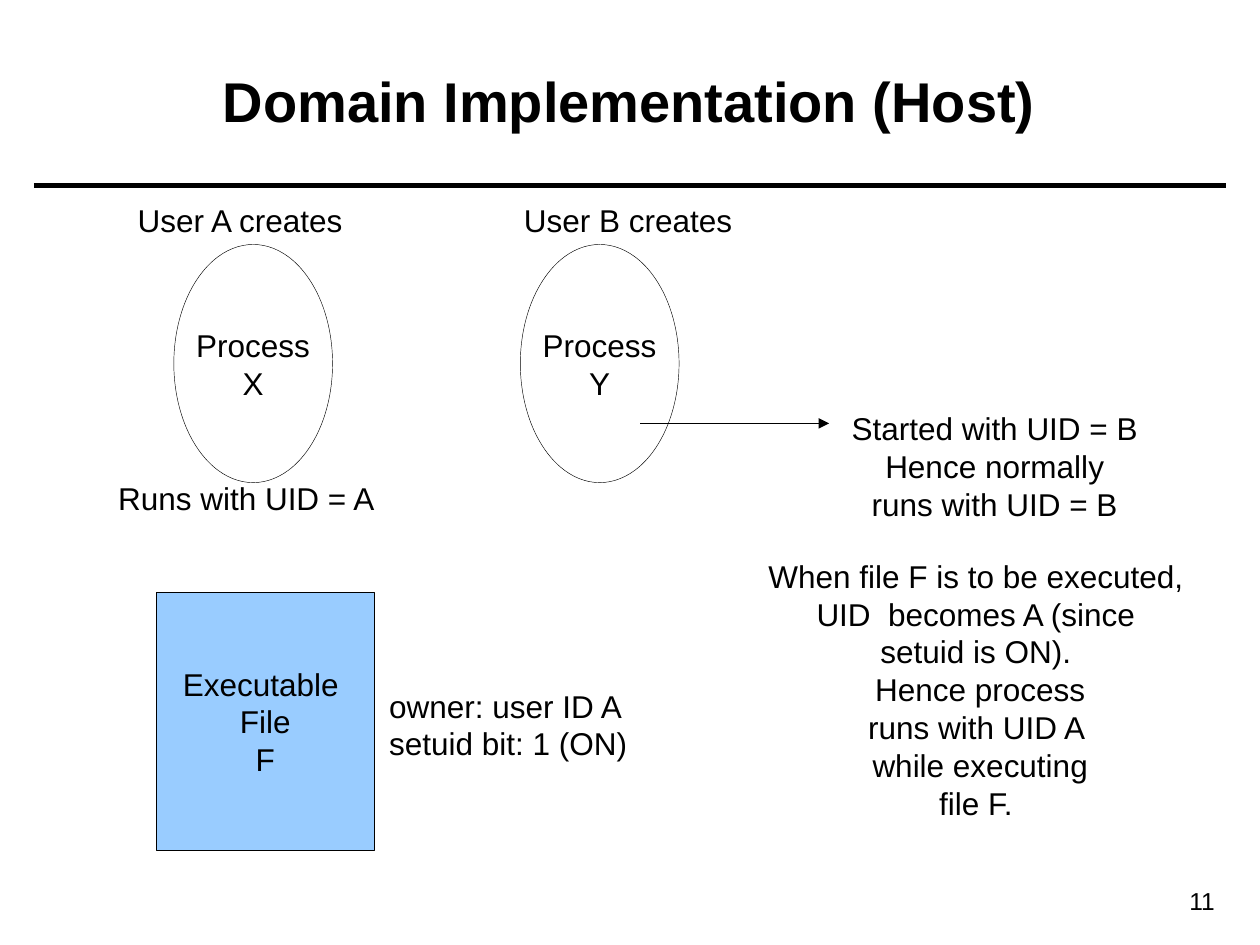
from dataclasses import dataclass

from lxml.etree import SubElement
from pptx import Presentation
from pptx.dml.color import RGBColor
from pptx.enum.shapes import MSO_CONNECTOR, MSO_SHAPE
from pptx.enum.text import MSO_ANCHOR, PP_ALIGN
from pptx.oxml.ns import qn
from pptx.util import Inches, Pt


@dataclass(frozen=True)
class Theme:
    font: str = "Arial"
    ink: RGBColor = RGBColor(0x00, 0x00, 0x00)
    file_fill: RGBColor = RGBColor(0x99, 0xCC, 0xFF)
    title_size: int = 32
    body_size: int = 18
    number_size: int = 14
    rule_width: float = 3
    outline_width: float = 0.25


THEME = Theme()


def write(frame, paragraphs, size=THEME.body_size, align=PP_ALIGN.CENTER,
          anchor=MSO_ANCHOR.TOP, bold=False, wrap=False):
    """Fill a text frame, one paragraph per item."""
    frame.word_wrap = wrap
    frame.vertical_anchor = anchor
    for index, content in enumerate(paragraphs):
        paragraph = frame.paragraphs[0] if index == 0 else frame.add_paragraph()
        paragraph.text = content
        paragraph.alignment = align
        paragraph.font.name = THEME.font
        paragraph.font.size = Pt(size)
        paragraph.font.bold = bold
        paragraph.font.color.rgb = THEME.ink


def add_title(slide, wording):
    title = slide.shapes.title
    title.left, title.top = Inches(0.35), Inches(0.17)
    title.width, title.height = Inches(9.29), Inches(1.25)
    write(title.text_frame, [wording], THEME.title_size,
          anchor=MSO_ANCHOR.MIDDLE, bold=True, wrap=True)


def add_label(slide, box, paragraphs, **style):
    label = slide.shapes.add_textbox(*map(Inches, box))
    write(label.text_frame, paragraphs, **style)


def add_node(slide, kind, box, paragraphs, fill=None):
    node = slide.shapes.add_shape(kind, *map(Inches, box))
    node.shadow.inherit = False
    if fill is None:
        node.fill.background()
    else:
        node.fill.solid()
        node.fill.fore_color.rgb = fill
    node.line.color.rgb = THEME.ink
    node.line.width = Pt(THEME.outline_width)
    write(node.text_frame, paragraphs, anchor=MSO_ANCHOR.MIDDLE)


def add_line(slide, left, right, y, width, arrow=False):
    line = slide.shapes.add_connector(
        MSO_CONNECTOR.STRAIGHT, *map(Inches, (left, y, right, y)))
    line.line.color.rgb = THEME.ink
    line.line.width = Pt(width)
    properties = line.element.spPr
    if arrow:
        SubElement(properties.find(qn("a:ln")), qn("a:tailEnd"), type="triangle")
    SubElement(properties, qn("a:effectLst"))


def main():
    deck = Presentation()
    deck.slide_width, deck.slide_height = Inches(10), Inches(7.5)
    slide = deck.slides.add_slide(deck.slide_layouts[5])

    # Heading, rule and page number
    add_line(slide, 0.27, 9.73, 1.47, THEME.rule_width)
    add_title(slide, "Domain Implementation (Host)")
    add_label(slide, (8.7, 6.98, 1.04, 0.34), ["11"],
              size=THEME.number_size, align=PP_ALIGN.RIGHT, wrap=True)

    # Executable file and its attributes
    add_node(slide, MSO_SHAPE.RECTANGLE, (1.24, 4.7, 1.73, 2.05),
             ["Executable ", "File", "F"], THEME.file_fill)
    add_label(slide, (2.99, 5.4, 2.09, 0.7),
              ["owner: user ID A", "setuid bit: 1 (ON)"], align=PP_ALIGN.LEFT)

    # Processes and the users who create them
    for user, process, label_left, process_left in (
            ("A", "X", 0.98, 1.38), ("B", "Y", 4.06, 4.13)):
        add_node(slide, MSO_SHAPE.OVAL, (process_left, 1.94, 1.26, 1.89),
                 ["Process", process])
        add_label(slide, (label_left, 1.55, 1.85, 0.4), [f"User {user} creates"])
    add_label(slide, (0.83, 3.75, 2.25, 0.4), ["Runs with UID = A"])

    # How the UID of process Y changes
    add_line(slide, 5.08, 6.58, 3.36, THEME.outline_width, arrow=True)
    add_label(slide, (6.66, 3.2, 2.47, 1),
              ["Started with UID = B", "Hence normally", "runs with UID = B"])
    add_label(slide, (6, 4.37, 3.56, 2.2),
              ["When file F is to be executed, ", "UID  becomes A (since ",
               "setuid is ON). ", "Hence process",
               "runs with UID A \nwhile executing\nfile F. "])

    deck.save("out.pptx")


if __name__ == "__main__":
    main()
